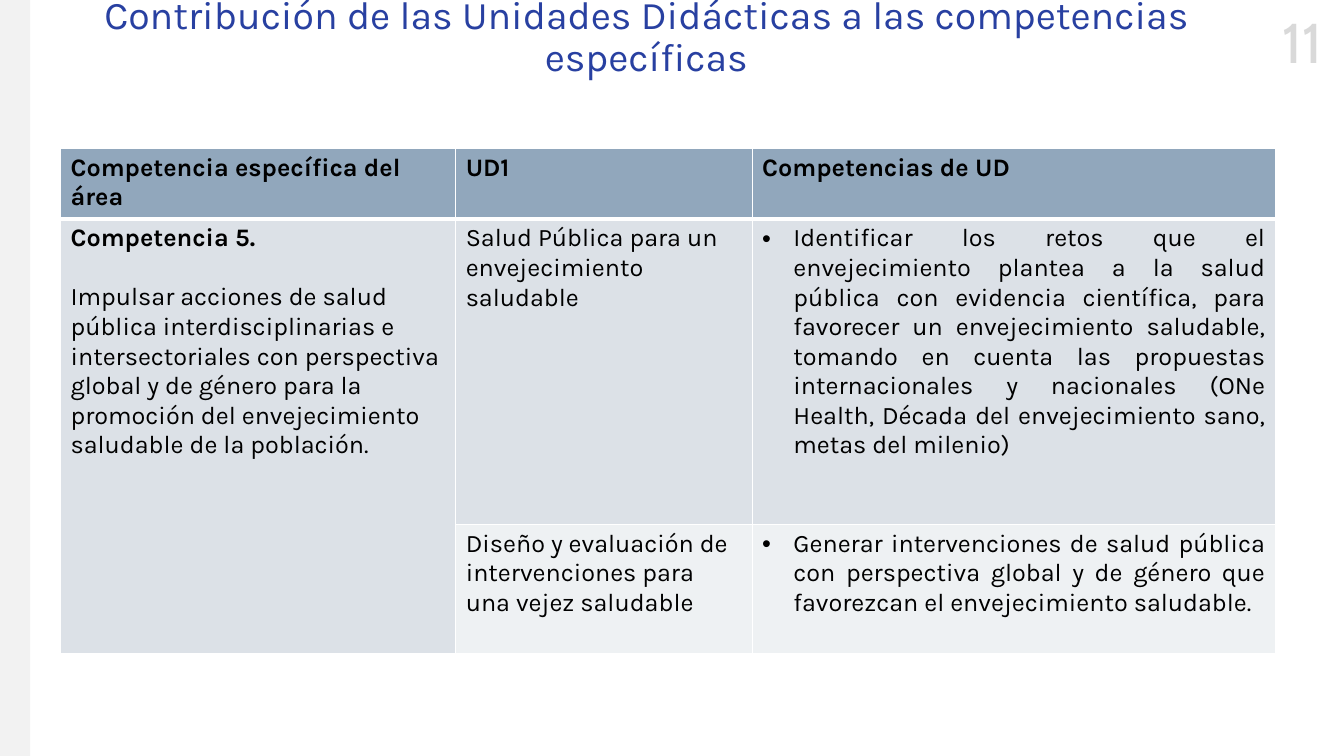
from pptx import Presentation
from pptx.util import Inches, Pt
from pptx.dml.color import RGBColor
from pptx.enum import shapes, text
from pptx.oxml import parse_xml
from pptx.oxml.ns import nsdecls
from lxml import etree

TITLE = "Contribución de las Unidades Didácticas a las competencias específicas"
PAGE = "11"
HEADS = ["Competencia específica del área", "UD1", "Competencias de UD"]
AREA = [
    ("Competencia 5.", True),
    ("Impulsar acciones de salud pública interdisciplinarias e intersectoriales con "
     "perspectiva global y de género para la promoción del envejecimiento saludable "
     "de la población.", False),
]
UNITS = [
    ("Salud Pública para un envejecimiento saludable",
     "Identificar los retos que el envejecimiento plantea a la salud pública con "
     "evidencia científica, para favorecer un envejecimiento saludable, tomando en "
     "cuenta las propuestas internacionales y nacionales (ONe Health, Década del "
     "envejecimiento sano, metas del milenio)"),
    ("Diseño y evaluación de intervenciones para una vejez saludable",
     "Generar intervenciones de salud pública con perspectiva global y de género que "
     "favorezcan el envejecimiento saludable."),
]
COLS = [3.92, 2.94, 5.19]
ROWS = [0.68, 3.03, 1.28]
COLORS = {"title": "2840A1", "page": "D9D9D9", "side": "F2F2F2", "head": "91A7BC",
          "odd": "DCE1E7", "even": "EEF1F3", "ink": "000000", "line": "FFFFFF"}


def color(name):
    return RGBColor.from_string(COLORS[name])


def add_run(para, words, size, ink="ink", face="Karla", bold=False):
    run = para.add_run()
    run.text = words
    font = run.font
    font.size, font.name, font.bold = Pt(size), face, bold
    font.color.rgb = color(ink)


def add_box(slide, at, words, size, ink, face, wrap):
    frame = slide.shapes.add_textbox(*map(Inches, at)).text_frame
    frame.word_wrap = wrap
    frame.vertical_anchor = text.MSO_ANCHOR.MIDDLE
    para = frame.paragraphs[0]
    para.alignment = text.PP_ALIGN.CENTER
    add_run(para, words, size, ink, face)
    return para


def add_bullet(para):
    para.alignment = text.PP_ALIGN.JUSTIFY
    props = para._p.get_or_add_pPr()
    props.set("marL", str(Inches(0.31)))
    props.set("indent", str(-Inches(0.31)))
    for tag, key, value in (("buFont", "typeface", "Arial"), ("buChar", "char", "•")):
        props.append(parse_xml(f'<a:{tag} {nsdecls("a")} {key}="{value}"/>'))


def style(cell, fill, base=1):
    props = cell._tc.get_or_add_tcPr()
    for side, width in (("L", 1), ("R", 1), ("T", 1), ("B", base)):
        props.append(etree.fromstring(
            f'<a:ln{side} {nsdecls("a")} w="{Pt(width)}"><a:solidFill>'
            f'<a:srgbClr val="{COLORS["line"]}"/></a:solidFill></a:ln{side}>'))
    cell.fill.solid()
    cell.fill.fore_color.rgb = color(fill)


def add_grid(slide):
    size = map(Inches, (0.6, 1.47, sum(COLS), sum(ROWS)))
    grid = slide.shapes.add_table(len(ROWS), len(COLS), *size).table
    for col, width in zip(grid.columns, COLS):
        col.width = Inches(width)
    for row, height in zip(grid.rows, ROWS):
        row.height = Inches(height)
    for i, head in enumerate(HEADS):
        cell = grid.cell(0, i)
        style(cell, "head", 3)
        add_run(cell.text_frame.paragraphs[0], head, 18, bold=True)
    for i, (unit, skill) in enumerate(UNITS, 1):
        for j, words in enumerate(("", unit, skill)):
            cell = grid.cell(i, j)
            style(cell, "odd" if i == 1 or j == 0 else "even")
            para = cell.text_frame.paragraphs[0]
            if j == 2:
                add_bullet(para)
            if words:
                add_run(para, words, 18)
    area = grid.cell(1, 0)
    area.merge(grid.cell(len(UNITS), 0))
    frame = area.text_frame
    for i, (words, bold) in enumerate(AREA):
        para = frame.add_paragraph() if i else frame.paragraphs[0]
        if i:
            para.space_before = Pt(21)
        add_run(para, words, 18, bold=bold)


def main():
    deck = Presentation()
    deck.slide_width, deck.slide_height = Inches(13.33), Inches(7.5)
    slide = deck.slides.add_slide(deck.slide_layouts[6])
    add_box(slide, (12.54, 0.02, 0.75, 0.77), PAGE, 40, "page", "Cabin", False)
    side = slide.shapes.add_shape(shapes.MSO_SHAPE.RECTANGLE, 0, 0,
                                  Inches(0.3), deck.slide_height)
    side.shadow.inherit = False
    side.fill.solid()
    side.fill.fore_color.rgb = color("side")
    side.line.fill.background()
    title = add_box(slide, (0.32, 0, 12.18, 0.75), TITLE, 28, "title", "Karla", True)
    title.line_spacing = 0.9
    add_grid(slide)
    deck.save("out.pptx")


if __name__ == "__main__":
    main()
